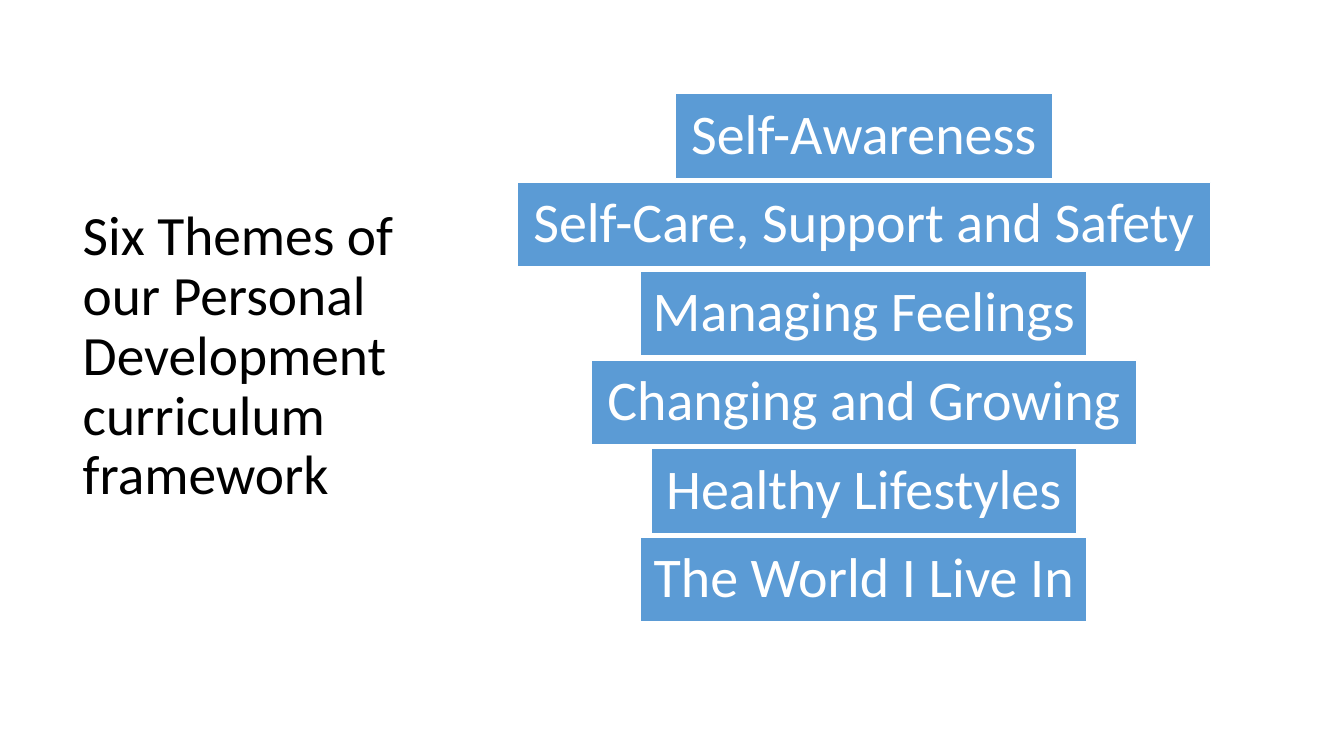
from dataclasses import dataclass

import pptx
import pptx.dml.color
import pptx.enum.shapes
import pptx.enum.text
import pptx.util

COLOURS = {"text": "000000", "bar": "5B9BD5", "white": "FFFFFF"}
FONT = "Calibri"
BAR_CENTRE = 617
BAR_TOP = 67
BAR_HEIGHT = 60.5
BAR_STEP = 63.36
BAR_INSET = 8


@dataclass(frozen=True)
class Theme:
    name: str
    width: float


THEMES = [
    Theme("Self-Awareness", 269.3),
    Theme("Self-Care, Support and Safety", 495.4),
    Theme("Managing Feelings", 319),
    Theme("Changing and Growing", 389.5),
    Theme("Healthy Lifestyles", 303.8),
    Theme("The World I Live In", 319),
]


def colour(name: str) -> pptx.dml.color.RGBColor:
    return pptx.dml.color.RGBColor.from_string(COLOURS[name])


def write_text(box, text: str, size: float, colour_name: str, alignment) -> None:
    frame = box.text_frame
    frame.auto_size = pptx.enum.text.MSO_AUTO_SIZE.NONE
    frame.vertical_anchor = pptx.enum.text.MSO_ANCHOR.MIDDLE
    para = frame.paragraphs[0]
    para.alignment = alignment
    para.line_spacing = 0.9
    para.space_before = pptx.util.Pt(0)
    span = para.add_run()
    span.text = text
    span.font.name = FONT
    span.font.size = pptx.util.Pt(size)
    span.font.color.rgb = colour(colour_name)


def add_title(page) -> None:
    title = page.shapes.title
    title.left, title.top = pptx.util.Pt(51.84), pptx.util.Pt(203)
    title.width, title.height = pptx.util.Pt(288), pptx.util.Pt(104.4)
    title.text_frame.word_wrap = True
    write_text(
        title,
        "Six Themes of our Personal Development curriculum framework",
        39.6,
        "text",
        pptx.enum.text.PP_ALIGN.LEFT,
    )


def add_theme(page, theme: Theme, row: int) -> None:
    bar = page.shapes.add_shape(
        pptx.enum.shapes.MSO_SHAPE.RECTANGLE,
        pptx.util.Pt(BAR_CENTRE - theme.width / 2),
        pptx.util.Pt(BAR_TOP + row * BAR_STEP),
        pptx.util.Pt(theme.width),
        pptx.util.Pt(BAR_HEIGHT),
    )
    bar.shadow.inherit = False
    bar.fill.solid()
    bar.fill.fore_color.rgb = colour("bar")
    bar.line.color.rgb = colour("white")
    bar.line.width = pptx.util.Pt(1)
    frame = bar.text_frame
    frame.word_wrap = False
    frame.margin_left = frame.margin_right = pptx.util.Pt(BAR_INSET)
    frame.margin_top = frame.margin_bottom = pptx.util.Pt(BAR_INSET)
    write_text(bar, theme.name, 40, "white", pptx.enum.text.PP_ALIGN.CENTER)


def main() -> None:
    deck = pptx.Presentation()
    deck.slide_width = pptx.util.Pt(960)
    deck.slide_height = pptx.util.Pt(540)
    page = deck.slides.add_slide(deck.slide_layouts.get_by_name("Title Only"))
    page.background.fill.solid()
    page.background.fill.fore_color.rgb = colour("white")
    add_title(page)
    for row, theme in enumerate(THEMES):
        add_theme(page, theme, row)
    deck.save("out.pptx")


if __name__ == "__main__":
    main()
